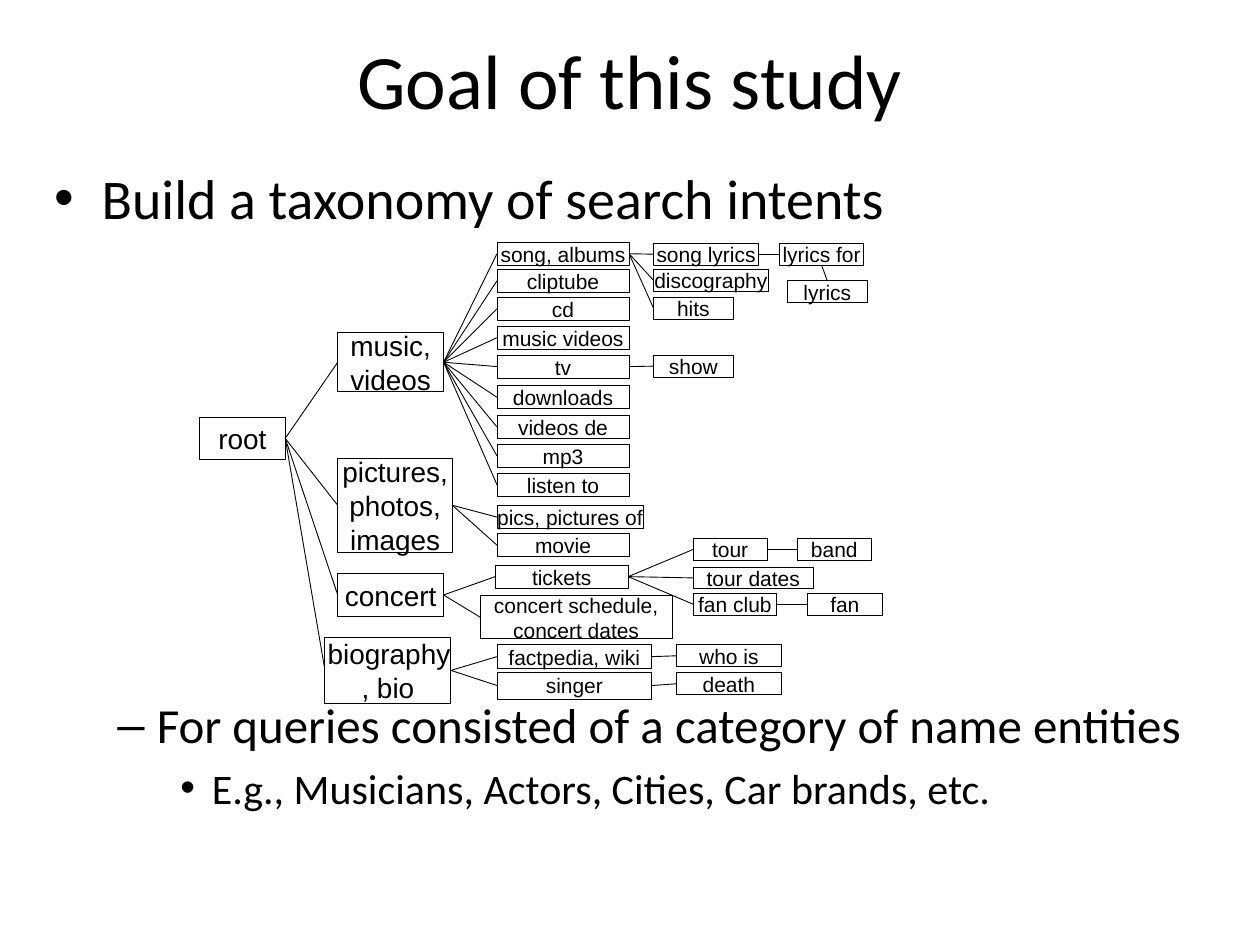
from lxml.etree import SubElement as Sub
from pptx import Presentation as Deck
from pptx.dml.color import RGBColor as Rgb
from pptx.enum.shapes import MSO_CONNECTOR as Link, MSO_SHAPE as Form
from pptx.enum.text import MSO_ANCHOR as Anchor, PP_ALIGN as Align
from pptx.oxml.ns import qn
from pptx.util import Pt

INK, PAPER = "000000", "FFFFFF"

ROOT = ("root", 114, 238.5, 49, 24)
TREE = {
    "root": [
        ("music, videos", 193, 190, 60.5, 34),
        ("pictures, photos, images", 193, 262, 65.5, 53.5),
        ("concert", 193, 327.5, 60.5, 25),
        ("biography, bio", 185.7, 364.1, 72, 38),
    ],
    "music, videos": [
        ("song, albums", 284, 138.5, 75.5, 13),
        ("cliptube", 284, 154, 75.5, 13),
        ("cd", 284, 170, 75.5, 13),
        ("music videos", 284, 186.5, 75.5, 13),
        ("tv", 284, 203, 75.5, 13),
        ("downloads", 284, 220.5, 75.5, 13),
        ("videos de", 284, 237.5, 75.5, 13),
        ("mp3", 284, 254, 75.5, 13),
        ("listen to", 284, 270.5, 75.5, 13),
    ],
    "pictures, photos, images": [
        ("pics, pictures of", 284, 289, 83.5, 13),
        ("movie", 284, 305, 75.5, 13),
    ],
    "concert": [
        ("tickets", 283, 323, 76, 13),
        ("concert schedule, concert dates", 274.5, 340.5, 109.5, 24.5),
    ],
    "biography, bio": [
        ("factpedia, wiki", 284, 368.5, 88.5, 13.5),
        ("singer", 284, 384, 88.5, 15.5),
    ],
    "song, albums": [
        ("song lyrics", 373.5, 139, 60, 12.5),
        ("discography", 373.5, 154, 65.5, 12.5),
        ("hits", 373.5, 170, 45.5, 12.5),
    ],
    "song lyrics": [("lyrics for", 445.5, 139, 48, 12.5)],
    "lyrics for": [("lyrics", 450, 160.5, 45.5, 12.5)],
    "tv": [("show", 373.5, 203, 45.5, 12.5)],
    "tickets": [
        ("tour", 396, 307.5, 42.5, 13),
        ("tour dates", 396, 324, 69, 12.5),
        ("fan club", 396, 339, 48, 12.5),
    ],
    "tour": [("band", 455.5, 307.5, 42.5, 13)],
    "fan club": [("fan", 461.5, 339, 42.5, 12.5)],
    "factpedia, wiki": [("who is", 386.5, 368.5, 60, 12.5)],
    "singer": [("death", 386.5, 384.5, 60, 12.5)],
}


def tint(code):
    """Turn a hex string into a colour."""
    return Rgb.from_string(code)


def write(para, text, size, font="Calibri", color=INK, align=Align.LEFT, gap=0):
    """Put formatted text into a paragraph."""
    run = para.add_run()
    run.text = text
    run.font.size, run.font.name = Pt(size), font
    run.font.color.rgb = tint(color)
    para.alignment, para.space_before = align, Pt(gap)


def dot(para, mark, left, hang):
    """Give a paragraph a hanging bullet."""
    props = para._p.get_or_add_pPr()
    props.set("marL", str(Pt(left)))
    props.set("indent", str(-Pt(hang)))
    Sub(props, qn("a:buFont"), typeface="Arial")
    Sub(props, qn("a:buChar"), char=mark)


def area(slide, left, top, wide, high):
    """Add a wrapping text box and return its frame."""
    frame = slide.shapes.add_textbox(Pt(left), Pt(top), Pt(wide), Pt(high)).text_frame
    frame.word_wrap = True
    return frame


def box(slide, node, size):
    """Draw one labelled node of the tree."""
    text, *place = node
    shape = slide.shapes.add_shape(Form.RECTANGLE, *map(Pt, place))
    shape.shadow.inherit = False
    shape.fill.solid()
    shape.fill.fore_color.rgb = tint(PAPER)
    shape.line.color.rgb, shape.line.width = tint(INK), Pt(0.5)
    frame = shape.text_frame
    frame.margin_left = frame.margin_right = frame.margin_top = frame.margin_bottom = 0
    frame.word_wrap, frame.vertical_anchor = True, Anchor.MIDDLE
    write(frame.paragraphs[0], text, size, font="Arial", align=Align.CENTER)


def join(slide, node, child):
    """Draw a line from a node to its child on the right or below."""
    _, left, top, wide, high = node
    _, x, y, w, h = child
    if x < left + wide:
        ends = left + wide / 2, top + high, x + w / 2, y
    else:
        ends = left + wide, top + high / 2, x, y + h / 2
    line = slide.shapes.add_connector(Link.STRAIGHT, *map(Pt, ends))
    line.line.color.rgb, line.line.width = tint(INK), Pt(0.5)
    Sub(line._element.spPr, qn("a:effectLst"))


def grow(slide, node, level=0):
    """Draw a node and everything under it."""
    box(slide, node, 16 if level < 2 else 12)
    for child in TREE.get(node[0], []):
        join(slide, node, child)
        grow(slide, child, level + 1)


def body(slide):
    """Write the bulleted text around the tree."""
    frame = area(slide, 24, 90, 690, 408)
    rows = [
        ("Build a taxonomy of search intents", 32, 0, "•", 27, 27),
        ("For queries consisted of a category of name entities", 28, 265, "–", 58.5, 22.5),
        ("E.g., Musicians, Actors, Cities, Car brands, etc.", 24, 5, "•", 90, 18),
    ]
    for i, (text, size, gap, mark, left, hang) in enumerate(rows):
        para = frame.add_paragraph() if i else frame.paragraphs[0]
        write(para, text, size, gap=gap)
        dot(para, mark, left, hang)


def main():
    """Build the slide and save it."""
    deck = Deck()
    deck.slide_width, deck.slide_height = Pt(720), Pt(540)
    slide = deck.slides.add_slide(deck.slide_layouts[6])
    title = area(slide, 0, 6, 720, 78)
    title.vertical_anchor = Anchor.MIDDLE
    write(title.paragraphs[0], "Goal of this study", 44, align=Align.CENTER)
    body(slide)
    grow(slide, ROOT)
    deck.save("out.pptx")


if __name__ == "__main__":
    main()
